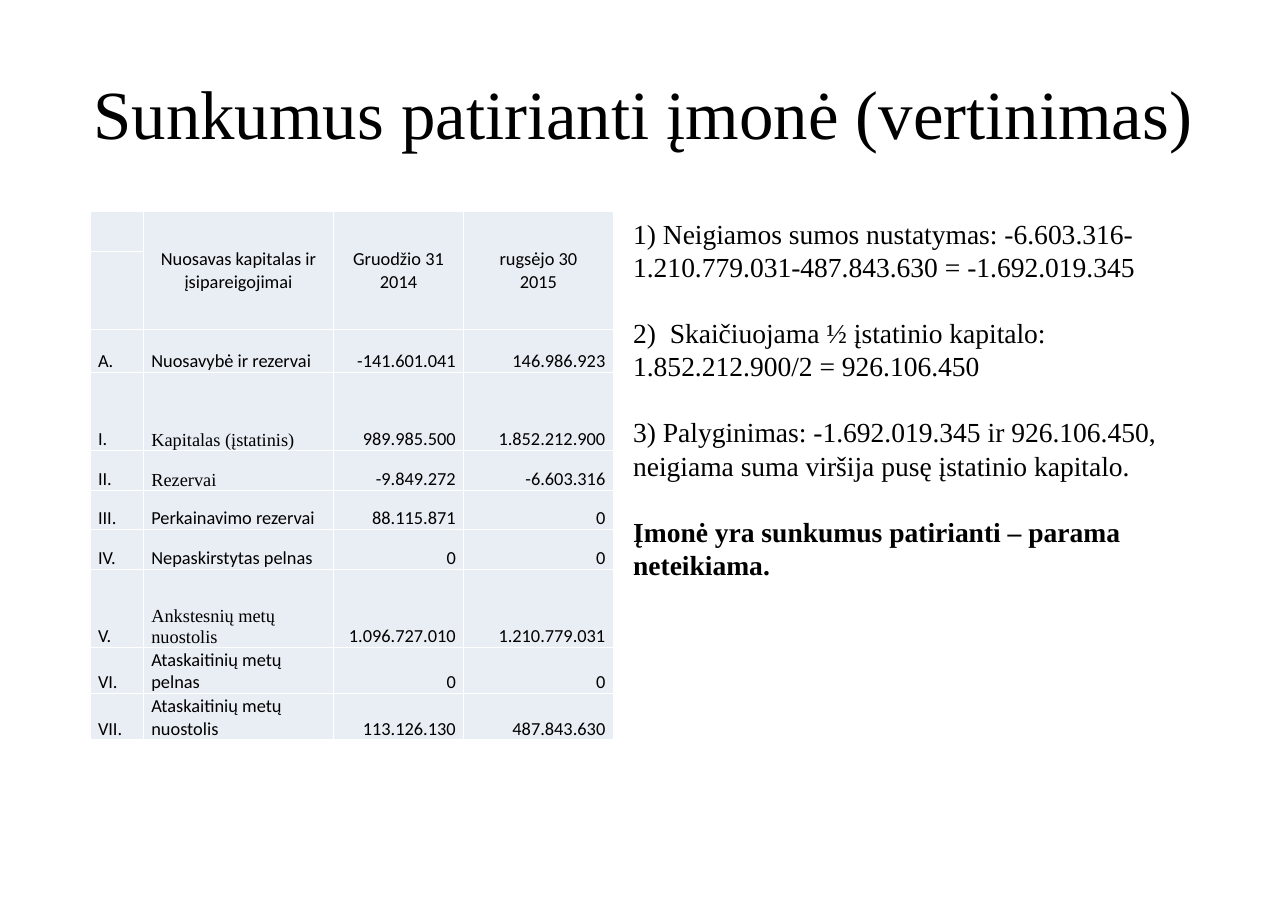
from lxml import etree
from pptx import Presentation
from pptx import util as u
from pptx.dml.color import RGBColor
from pptx.enum import text
from pptx.oxml import ns

COLORS = {"text": "000000", "cell": "E9EDF4", "border": "FFFFFF"}
SERIF, SANS = "Times New Roman", "Calibri"
LEFT, CENTER, RIGHT = text.PP_ALIGN.LEFT, text.PP_ALIGN.CENTER, text.PP_ALIGN.RIGHT
MIDDLE, BOTTOM = text.MSO_ANCHOR.MIDDLE, text.MSO_ANCHOR.BOTTOM

TITLE = "Sunkumus patirianti įmonė (vertinimas)"
HEADERS = ["Nuosavas kapitalas ir įsipareigojimai", "Gruodžio 31 2014", "rugsėjo 30\n2015"]
BALANCE = [
    ("A.", "Nuosavybė ir rezervai", "-141.601.041", "146.986.923"),
    ("I.", "Kapitalas (įstatinis)", "989.985.500", "1.852.212.900"),
    ("II.", "Rezervai", "-9.849.272", "-6.603.316"),
    ("III.", "Perkainavimo rezervai", "88.115.871", "0"),
    ("IV.", "Nepaskirstytas pelnas", "0", "0"),
    ("V.", "Ankstesnių metų nuostolis", "1.096.727.010", "1.210.779.031"),
    ("VI.", "Ataskaitinių metų pelnas", "0", "0"),
    ("VII.", "Ataskaitinių metų nuostolis", "113.126.130", "487.843.630"),
]
SERIF_LABELS = {"I.", "II.", "V."}
COL_WIDTHS = [1.23, 4.38, 3.0, 3.45]
ROW_HEIGHTS = [0.91, 1.81, 0.99, 1.8, 0.91, 0.91, 0.91, 1.8, 1.07, 1.07]
STEPS = [
    "1) Neigiamos sumos nustatymas: -6.603.316-1.210.779.031-487.843.630 = -1.692.019.345",
    "2)  Skaičiuojama ½ įstatinio kapitalo: 1.852.212.900/2 = 926.106.450",
    "3) Palyginimas: -1.692.019.345 ir 926.106.450, neigiama suma viršija pusę įstatinio kapitalo.",
]
CONCLUSION = "Įmonė yra sunkumus patirianti – parama neteikiama."


def write(p, words, size=12, font=SANS, bold=False, align=LEFT, before=0, line=None):
    """Fill one paragraph with formatted text."""
    p.alignment = align
    p.space_before = u.Pt(before)
    if line:
        p.line_spacing = u.Pt(line)
    r = p.add_run()
    r.text = words
    r.font.size, r.font.name, r.font.bold = u.Pt(size), font, bold
    r.font.color.rgb = RGBColor.from_string(COLORS["text"])


def add_box(s, left, top, width, height):
    sp = s.shapes.add_textbox(u.Cm(left), u.Cm(top), u.Cm(width), u.Cm(height))
    sp.text_frame.word_wrap = True
    return sp.text_frame


def add_title(s, left, top, width, height):
    tf = add_box(s, left, top, width, height)
    tf.vertical_anchor = MIDDLE
    write(tf.paragraphs[0], TITLE, size=45, font=SERIF, align=CENTER)


def style_cell(cell):
    """Give a cell its margins, white borders and fill."""
    cell.margin_left = cell.margin_right = u.Cm(0.18)
    cell.margin_top = cell.margin_bottom = 0
    tc_pr = cell._tc.get_or_add_tcPr()
    for side in ("lnL", "lnR", "lnT", "lnB"):
        ln = etree.SubElement(tc_pr, ns.qn("a:" + side), w=str(u.Pt(1)))
        fill = etree.SubElement(ln, ns.qn("a:solidFill"))
        etree.SubElement(fill, ns.qn("a:srgbClr"), val=COLORS["border"])
    cell.fill.solid()
    cell.fill.fore_color.rgb = RGBColor.from_string(COLORS["cell"])


def add_balance_table(s, left, top):
    frame = s.shapes.add_table(len(ROW_HEIGHTS), len(COL_WIDTHS), u.Cm(left), u.Cm(top),
                               u.Cm(sum(COL_WIDTHS)), u.Cm(sum(ROW_HEIGHTS)))
    table = frame.table
    table.first_row = table.horz_banding = False
    for col, width in zip(table.columns, COL_WIDTHS):
        col.width = u.Cm(width)
    for row, height in zip(table.rows, ROW_HEIGHTS):
        row.height = u.Cm(height)
    for cell in table.iter_cells():
        style_cell(cell)

    # Headers span the first two rows
    for c, header in enumerate(HEADERS, 1):
        cell = table.cell(0, c)
        cell.merge(table.cell(1, c))
        cell.vertical_anchor = MIDDLE
        tf = cell.text_frame
        for i, line in enumerate(header.split("\n")):
            write(tf.add_paragraph() if i else tf.paragraphs[0], line, align=CENTER)

    # Balance rows
    for r, values in enumerate(BALANCE, 2):
        for c, value in enumerate(values):
            cell = table.cell(r, c)
            cell.vertical_anchor = BOTTOM
            serif = c == 1 and values[0] in SERIF_LABELS
            write(cell.text_frame.paragraphs[0], value, font=SERIF if serif else SANS,
                  align=RIGHT if c > 1 else LEFT)


def add_assessment(s, left, top, width, height):
    tf = add_box(s, left, top, width, height)
    line = 21.6
    for i, step in enumerate(STEPS + [CONCLUSION]):
        write(tf.add_paragraph() if i else tf.paragraphs[0], step, size=18, font=SERIF,
              bold=step == CONCLUSION, before=line if i else 0, line=line)


def main():
    prs = Presentation()
    prs.slide_width, prs.slide_height = u.Cm(29.7), u.Cm(21)
    s = prs.slides.add_slide(prs.slide_layouts[6])
    add_title(s, 1.47, 0.84, 26.72, 3.5)
    add_balance_table(s, 2.08, 4.88)
    add_assessment(s, 14.35, 4.88, 13.28, 10.26)
    prs.save("out.pptx")


if __name__ == "__main__":
    main()
